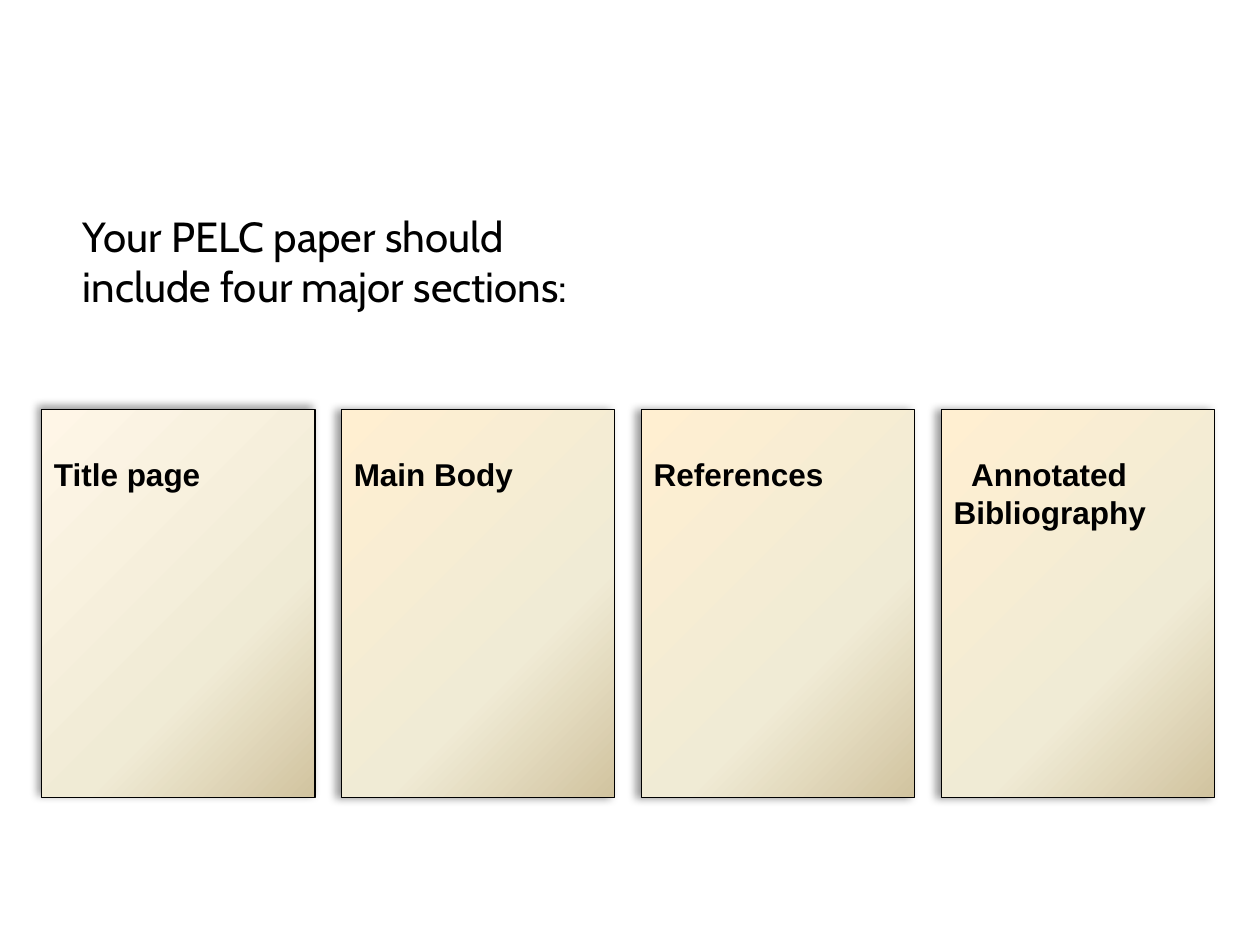
from lxml import etree
from pptx import Presentation
from pptx.dml.color import RGBColor
from pptx.enum.shapes import MSO_SHAPE as SHAPE
from pptx.enum.text import MSO_ANCHOR as ANCHOR, PP_ALIGN as ALIGN
from pptx.oxml import parse_xml
from pptx.oxml.ns import qn
from pptx.util import Inches, Pt

BLACK = RGBColor(0x00, 0x00, 0x00)
CREAM = RGBColor(0xFF, 0xEF, 0xD1)
PALE = RGBColor(0xFF, 0xF6, 0xE7)
SAND = RGBColor(0xF0, 0xEB, 0xD5)
TAN = RGBColor(0xD1, 0xC3, 0x9F)
NS = 'xmlns:a="http://schemas.openxmlformats.org/drawingml/2006/main"'

# Card grid, in inches
LEFT, TOP, PITCH = 0.33, 3.25, 2.38
CARD_W, CARD_H = 2.17, 3.08


def set_gradient(sp, colors):
    sp.fill.gradient()
    sp.fill.gradient_angle = 315  # counter-clockwise: top left to bottom right
    stops = sp._element.spPr.find(".//" + qn("a:gsLst"))
    for stop in list(stops):
        stops.remove(stop)
    for pos, color in zip((0, 65, 100), colors):
        stops.append(parse_xml(
            f'<a:gs {NS} pos="{pos * 1000}"><a:srgbClr val="{color}"/></a:gs>'))


def set_shadow(sp, angle):
    sp.shadow.inherit = False
    effects = sp._element.spPr.find(qn("a:effectLst"))
    shadow = etree.SubElement(
        effects, qn("a:outerShdw"), blurRad=str(Pt(5)), dist=str(Pt(3)),
        dir=str(angle * 60000), algn="ctr", rotWithShape="0")
    color = etree.SubElement(shadow, qn("a:srgbClr"), val=str(BLACK))
    etree.SubElement(color, qn("a:alpha"), val="40000")


prs = Presentation()
prs.slide_width, prs.slide_height = Inches(10), Inches(7.5)
s = prs.slides.add_slide(prs.slide_layouts[6])

# Introduction
tf = s.shapes.add_textbox(
    Inches(0.56), Inches(1.62), Inches(8.64), Inches(1.21)).text_frame
tf.word_wrap = True
tf.text = "Your PELC paper should\ninclude four major sections:"
for p in tf.paragraphs:
    for r in p.runs:
        r.font.name, r.font.size = "Cabin", Pt(24)
        r.font.color.rgb = BLACK

# One card per section: label, first stop, shadow angle, first-line indent
cards = [
    ("Title page", PALE, 225, 0),
    ("Main Body", CREAM, 180, 0),
    ("References", CREAM, 180, 0),
    ("Annotated Bibliography", CREAM, 180, 0.14),
]
for col, (label, start, angle, indent) in enumerate(cards):
    sp = s.shapes.add_shape(
        SHAPE.RECTANGLE, Inches(LEFT + col * PITCH), Inches(TOP),
        Inches(CARD_W), Inches(CARD_H))
    set_gradient(sp, (start, SAND, TAN))
    sp.line.color.rgb, sp.line.width = BLACK, Pt(0.75)
    set_shadow(sp, angle)
    tf = sp.text_frame
    tf.word_wrap = True
    tf.vertical_anchor = ANCHOR.TOP
    tf.margin_top = Inches(0.36)
    tf.text = label
    p = tf.paragraphs[0]
    p.alignment = ALIGN.LEFT
    if indent:
        p._p.get_or_add_pPr().set("indent", str(Inches(indent)))
    r = p.runs[0]
    r.font.name, r.font.size, r.font.bold = "Arial", Pt(18), True
    r.font.color.rgb = BLACK

prs.save("out.pptx")
